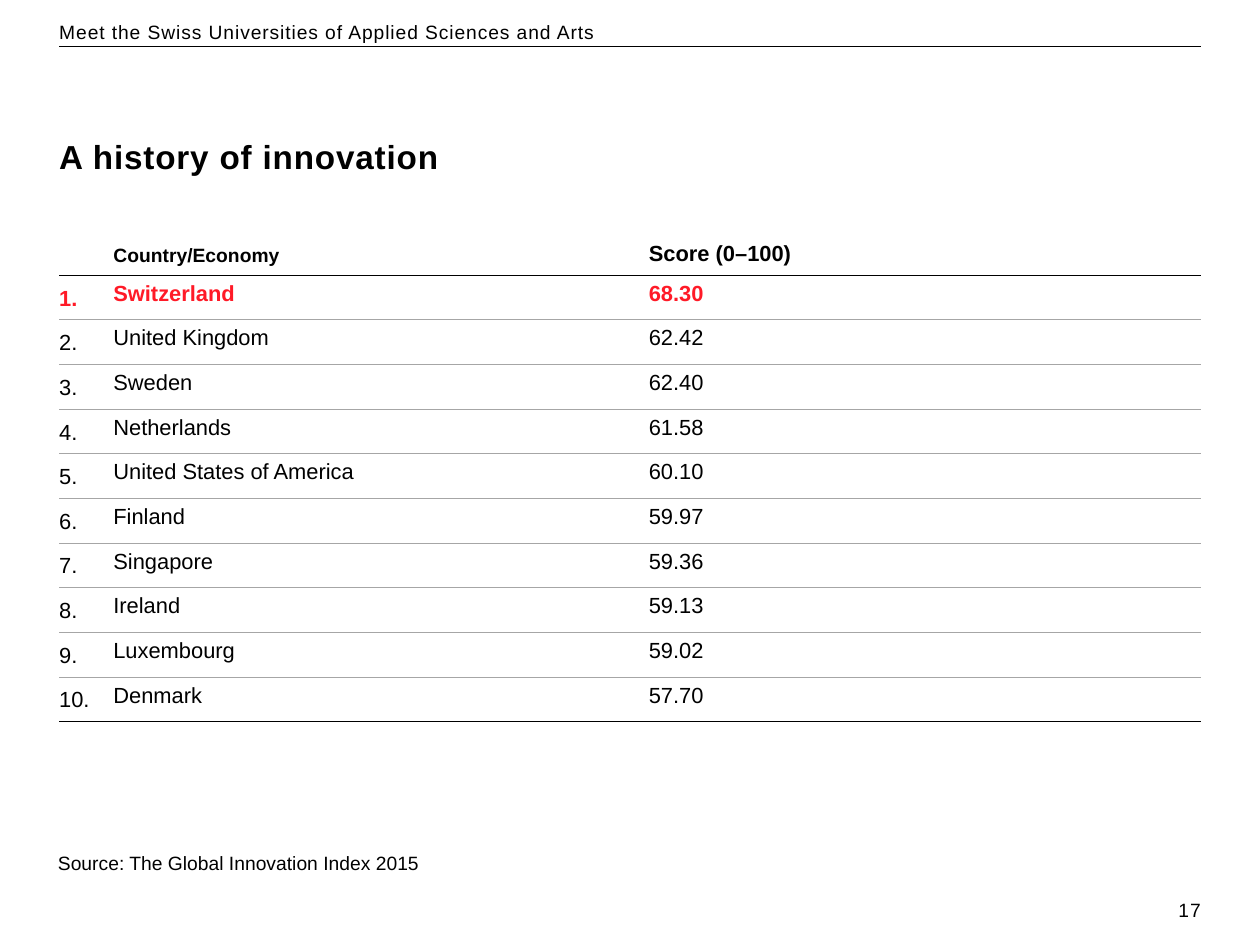
from lxml import etree
from pptx import Presentation
from pptx.dml.color import RGBColor
from pptx.enum.shapes import MSO_CONNECTOR
from pptx.enum.text import MSO_ANCHOR, PP_ALIGN
from pptx.oxml.ns import qn
from pptx.util import Inches, Pt

BLACK = RGBColor(0x00, 0x00, 0x00)
WHITE = RGBColor(0xFF, 0xFF, 0xFF)
GREY = RGBColor(0xA6, 0xA6, 0xA6)
RED = RGBColor(0xFF, 0x1A, 0x27)
LEFT, RIGHT = PP_ALIGN.LEFT, PP_ALIGN.RIGHT
TOP, MIDDLE = MSO_ANCHOR.TOP, MSO_ANCHOR.MIDDLE
STRAIGHT = MSO_CONNECTOR.STRAIGHT
FONT = "Arial"
EDGE, WIDE = Inches(0.47), Inches(9.06)


def write(frame, text, size=11, color=BLACK, bold=False, align=LEFT,
          lead=None, after=None, track=None):
    frame.word_wrap = True
    par = frame.paragraphs[0]
    par.alignment = align
    if lead:
        par.line_spacing = Pt(lead)
    if after:
        par.space_after = Pt(after)
    run = par.add_run()
    run.text = text
    font = run.font
    font.name, font.size, font.bold = FONT, Pt(size), bold
    font.color.rgb = color
    if track:
        run._r.get_or_add_rPr().set("spc", str(track))


def border(cell, side, color=None):
    line = etree.SubElement(cell._tc.get_or_add_tcPr(), qn("a:ln" + side))
    if color is None:
        etree.SubElement(line, qn("a:noFill"))
        return
    line.set("w", str(Pt(0.5)))
    fill = etree.SubElement(line, qn("a:solidFill"))
    etree.SubElement(fill, qn("a:srgbClr")).set("val", str(color))


deck = Presentation()
deck.slide_width, deck.slide_height = Inches(10), Inches(7.5)
slide = deck.slides.add_slide(deck.slide_layouts[5])
shapes = slide.shapes

rule = shapes.add_connector(STRAIGHT, EDGE, Inches(0.37), EDGE + WIDE, Inches(0.37))
rule.line.color.rgb = BLACK
rule.line.width = Pt(0.6)
etree.SubElement(rule._element.spPr, qn("a:effectLst"))

title = shapes.title
title.left, title.top = EDGE, Inches(1.08)
title.width, title.height = WIDE, Inches(0.42)

head = shapes.add_textbox(EDGE, Inches(0.16), WIDE, Inches(0.37))
page = shapes.add_textbox(Inches(8.94), Inches(7.13), Inches(0.59), Inches(0.2))
source = shapes.add_textbox(Inches(0.46), Inches(6.76), Inches(5.09), Inches(0.22))

for box, text, style in (
    (title, "A history of innovation", dict(size=19, bold=True, lead=22.8, track=50)),
    (head, "Meet the Swiss Universities of Applied Sciences and Arts",
     dict(lead=13.2, after=8, track=50)),
    (page, "17", dict(align=RIGHT, lead=13.2, track=50)),
    (source, "Source: The Global Innovation Index 2015", {}),
):
    frame = box.text_frame
    frame.margin_left = frame.margin_right = 0
    frame.margin_top = frame.margin_bottom = 0
    frame.vertical_anchor = TOP
    write(frame, text, **style)

scores = [
    ("Switzerland", "68.30"),
    ("United Kingdom", "62.42"),
    ("Sweden", "62.40"),
    ("Netherlands", "61.58"),
    ("United States of America", "60.10"),
    ("Finland", "59.97"),
    ("Singapore", "59.36"),
    ("Ireland", "59.13"),
    ("Luxembourg", "59.02"),
    ("Denmark", "57.70"),
]
rows = [("", "Country/Economy", "Score (0–100)")]
rows += [(f"{rank}.", *score) for rank, score in enumerate(scores, 1)]
last = len(rows) - 1

table = shapes.add_table(len(rows), 3, EDGE, Inches(1.83), WIDE, Inches(3.9)).table
table.first_row = table.horz_banding = False
for col, width in zip(table.columns, (0.43, 4.25, 4.38)):
    col.width = Inches(width)

for i, row in enumerate(rows):
    table.rows[i].height = Inches(3.9 / len(rows))
    for j, text in enumerate(row):
        cell = table.cell(i, j)
        tight = i == 0 or j == 0
        cell.vertical_anchor = MIDDLE if tight else TOP
        cell.margin_left = 0
        cell.margin_right = Inches(0 if tight else 0.1)
        cell.margin_top = cell.margin_bottom = Inches(0 if tight else 0.05)
        border(cell, "L")
        border(cell, "R")
        border(cell, "T", (None, BLACK)[i] if i < 2 else GREY)
        border(cell, "B", BLACK if i in (0, last) else GREY)
        cell.fill.solid()
        cell.fill.fore_color.rgb = WHITE
        if text:
            write(cell.text_frame, text, size=11 if (i, j) == (0, 1) else 12.5,
                  color=RED if i == 1 else BLACK, bold=i < 2,
                  lead=15 if tight else None)

deck.save("out.pptx")
